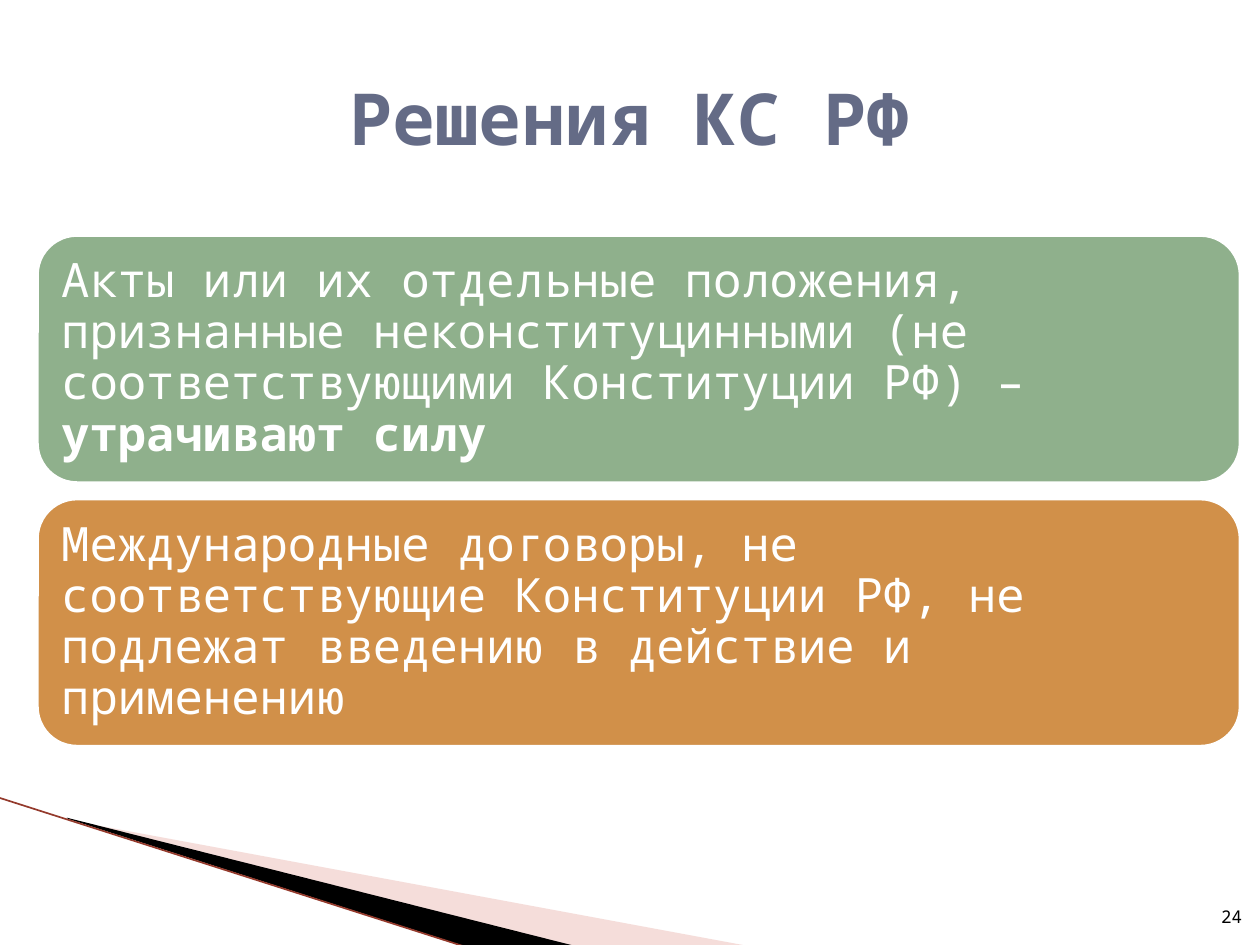
from typing import NamedTuple

from lxml.etree import SubElement
from pptx import Presentation
from pptx.dml.color import RGBColor
from pptx.enum.shapes import MSO_CONNECTOR, MSO_SHAPE
from pptx.enum.text import MSO_ANCHOR, PP_ALIGN
from pptx.oxml.ns import qn
from pptx.util import Pt

FONT = "Noto Sans Mono"
LEFT, TOP, WIDTH, HEIGHT, STEP = 20, 133.2, 690, 144, 150.6


class Card(NamedTuple):
    fill: str
    text: str
    strong: str = ""


class Wedge(NamedTuple):
    fill: str
    points: list[tuple[float, float]]
    alpha: int = 100


CARDS = [
    Card("8FB08C",
         "Акты или их отдельные положения, признанные неконституцинными "
         "(не соответствующими Конституции РФ) – ",
         "утрачивают силу"),
    Card("D19049",
         "Международные договоры, не соответствующие Конституции РФ, "
         "не подлежат введению в действие и применению"),
]

WEDGES = [
    Wedge("E7ACA4", [(39.6, 468.7), (428.4, 540.7), (328.3, 540.7), (39.6, 468)], 40),
    Wedge("000000", [(38.2, 467.3), (329, 540.7), (267.8, 541.4), (38.9, 468)]),
]


def color(code: str) -> RGBColor:
    return RGBColor.from_string(code)


def style(para, size: float, code: str, align=PP_ALIGN.LEFT) -> None:
    para.alignment = align
    font = para.font
    font.name, font.size = FONT, Pt(size)
    font.color.rgb = color(code)


def draw_wedge(shapes, wedge: Wedge) -> None:
    start, *rest = [(Pt(x), Pt(y)) for x, y in wedge.points]
    path = shapes.build_freeform(*start)
    path.add_line_segments(rest, close=True)
    shape = path.convert_to_shape()
    shape.shadow.inherit = False
    shape.fill.solid()
    shape.fill.fore_color.rgb = color(wedge.fill)
    shape.line.fill.background()
    if wedge.alpha < 100:
        tone = shape.fill._xPr.find(qn("a:solidFill"))[0]
        SubElement(tone, qn("a:alpha"), val=str(wedge.alpha * 1000))


def draw_edge(shapes) -> None:
    edge = shapes.add_connector(
        MSO_CONNECTOR.STRAIGHT, Pt(-0.7), Pt(455.8), Pt(267.1), Pt(541.4))
    edge.line.color.rgb = color("943A2C")
    edge.line.width = Pt(0.95)
    SubElement(edge._element.spPr, qn("a:effectLst"))


def draw_card(shapes, card: Card, top: float) -> None:
    shape = shapes.add_shape(
        MSO_SHAPE.ROUNDED_RECTANGLE, Pt(LEFT), Pt(top), Pt(WIDTH), Pt(HEIGHT))
    shape.shadow.inherit = False
    shape.fill.solid()
    shape.fill.fore_color.rgb = color(card.fill)
    shape.line.color.rgb = color("FFFFFF")
    shape.line.width = Pt(4.33)
    frame = shape.text_frame
    frame.word_wrap = True
    frame.vertical_anchor = MSO_ANCHOR.MIDDLE
    frame.margin_left = frame.margin_right = Pt(8)
    frame.margin_top = frame.margin_bottom = Pt(8)
    para = frame.paragraphs[0]
    para.line_spacing = 0.9
    para.space_after = Pt(9.5)
    style(para, 27, "FFFFFF")
    para.add_run().text = card.text
    if card.strong:
        run = para.add_run()
        run.text = card.strong
        run.font.bold = True


def draw_title(title) -> None:
    title.left, title.top, title.width, title.height = Pt(36), Pt(21.6), Pt(648), Pt(90)
    frame = title.text_frame
    frame.text = "Решения КС РФ"
    frame.vertical_anchor = MSO_ANCHOR.MIDDLE
    para = frame.paragraphs[0]
    style(para, 41, "646B86", PP_ALIGN.CENTER)
    para.font.bold = True


def draw_number(shapes) -> None:
    box = shapes.add_textbox(Pt(681), Pt(504.7), Pt(28.8), Pt(28.8))
    frame = box.text_frame
    frame.word_wrap = True
    frame.vertical_anchor = MSO_ANCHOR.BOTTOM
    frame.margin_left = frame.margin_right = 0
    frame.text = "24"
    style(frame.paragraphs[0], 10, "000000", PP_ALIGN.RIGHT)


def main() -> None:
    deck = Presentation()
    deck.slide_width, deck.slide_height = Pt(720), Pt(540)
    slide = deck.slides.add_slide(deck.slide_layouts[5])
    shapes = slide.shapes
    for wedge in WEDGES:
        draw_wedge(shapes, wedge)
    draw_edge(shapes)
    for row, card in enumerate(CARDS):
        draw_card(shapes, card, TOP + row * STEP)
    draw_title(shapes.title)
    draw_number(shapes)
    deck.save("out.pptx")


if __name__ == "__main__":
    main()
